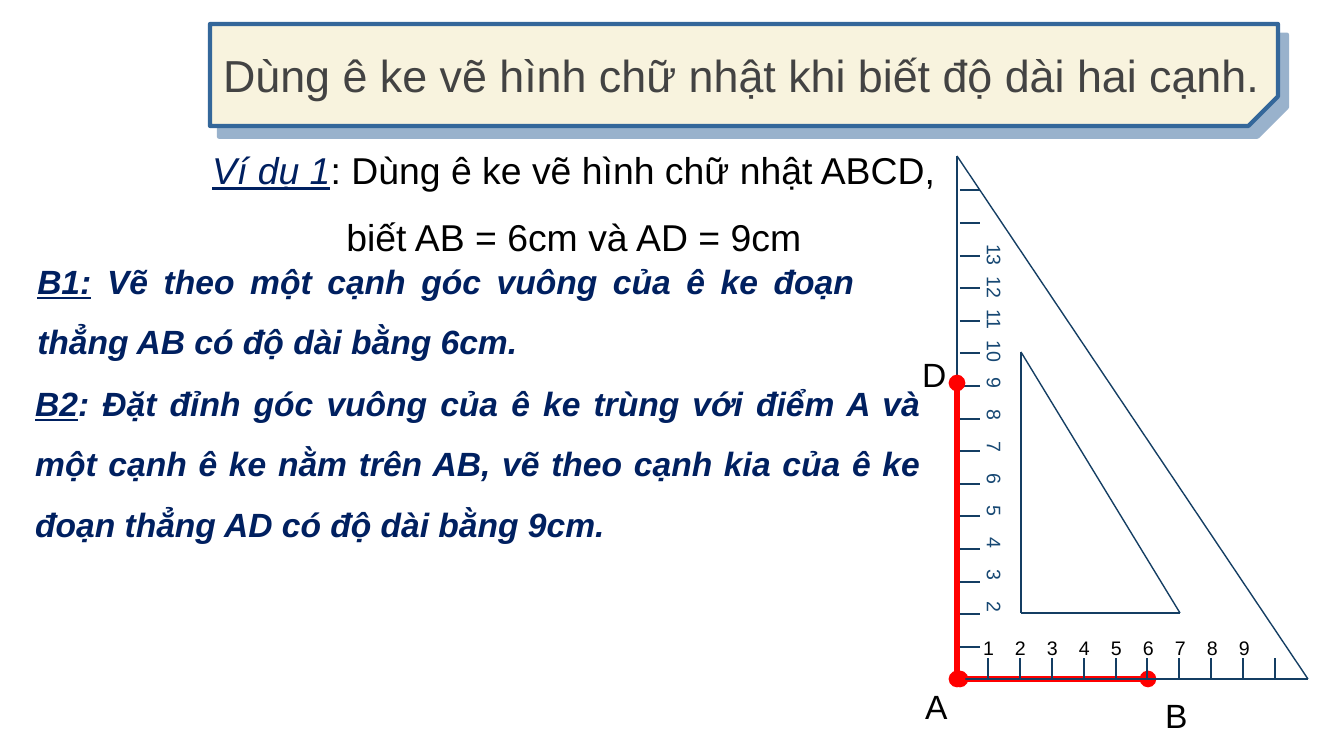
from dataclasses import dataclass
from lxml.etree import SubElement
from pptx import Presentation
from pptx.dml.color import RGBColor
from pptx.enum.shapes import MSO_CONNECTOR, MSO_SHAPE
from pptx.enum.text import MSO_ANCHOR, MSO_AUTO_SIZE, PP_ALIGN
from pptx.oxml.ns import qn
from pptx.util import Emu, Pt


@dataclass
class Theme:
    font: str = "Arial"
    cream: str = "F8F3DE"
    frame: str = "34679A"
    heading: str = "434343"
    navy: str = "002060"
    black: str = "000000"
    red: str = "FF0000"
    ruler: str = "143E63"
    digits: str = "174873"
    title_size: float = 24
    example_size: float = 20
    body_size: float = 18
    digit_size: float = 10.5


T = Theme()
SCALE = 914400 / 134.4


def px(*values):
    return [Emu(int(v * SCALE)) for v in values]


def write(sp, runs, size, **para):
    """Fill a text shape with one paragraph of (text, colour, format) runs."""
    tf = sp.text_frame
    tf.word_wrap = True
    tf.vertical_anchor = MSO_ANCHOR.TOP
    p = tf.paragraphs[0]
    for name, value in para.items():
        setattr(p, name, value)
    for text, color, fmt in runs:
        r = p.add_run()
        r.text = text
        r.font.color.rgb = RGBColor.from_string(color)
        for name, value in {"name": T.font, "size": Pt(size), **fmt}.items():
            setattr(r.font, name, value)
    return p


prs = Presentation()
prs.slide_width, prs.slide_height = px(1344, 756)
s = prs.slides.add_slide(prs.slide_layouts[5])

# Heading plate with one snipped corner and a hard shadow
plate = s.shapes.add_shape(MSO_SHAPE.SNIP_1_RECTANGLE, *px(210, 24, 1068, 102))
plate.adjustments[0] = 0.29
plate.rotation = 180
plate._element.spPr.find(qn("a:xfrm")).set("flipH", "1")
plate.fill.solid()
plate.fill.fore_color.rgb = RGBColor.from_string(T.cream)
plate.line.color.rgb = RGBColor.from_string(T.frame)
plate.line.width = Pt(2.25)
plate.shadow.inherit = False
effects = plate._element.spPr.find(qn("a:effectLst"))
shadow = SubElement(effects, qn("a:outerShdw"), blurRad="0", dist=str(Pt(7.5)),
                    dir=str(50 * 60000), algn="bl", rotWithShape="0")
shade = SubElement(shadow, qn("a:srgbClr"), val=T.frame)
SubElement(shade, qn("a:alpha"), val="50000")

# Title; the plate goes behind it
title = s.shapes.title
title.left, title.top, title.width, title.height = px(210, 24, 1094, 129)
s.shapes._spTree.remove(plate._element)
title._element.addprevious(plate._element)
tf = title.text_frame
tf.auto_size = MSO_AUTO_SIZE.NONE
for side in ("left", "top", "right", "bottom"):
    setattr(tf, f"margin_{side}", px(13)[0])
write(title, [("Dùng ê ke vẽ hình chữ nhật khi biết độ dài hai cạnh.", T.heading, {})],
      T.title_size, alignment=PP_ALIGN.JUSTIFY, line_spacing=1.2)

# Set square: outer triangle, inner triangle, centimetre ticks
CORNER_X, CORNER_Y = 957, 679
outer = [(CORNER_X, 156), (CORNER_X, CORNER_Y), (1308, CORNER_Y)]
inner = [(1021, 352), (1021, 613), (1180, 613)]
edges = [(tri[i - 1], tri[i]) for tri in (outer, inner) for i in range(3)]
for i in range(1, 11):
    x = CORNER_X + 318 * i // 10
    edges.append(((x, CORNER_Y), (x, 658)))
for i in range(1, 16):
    y = CORNER_Y - 326 * i // 10
    edges.append(((960, y), (980, y)))

lines = [((960, CORNER_Y), (1148, CORNER_Y), T.red, 3)]
lines += [(a, b, T.ruler, 0.75) for a, b in edges]
lines.append(((CORNER_X, CORNER_Y), (CORNER_X, 383), T.red, 3))

# Sides AB and AD are red with round ends, below and above the set square
square = None
for a, b, color, width in lines:
    if color == T.ruler and square is None:
        square = s.shapes.add_group_shape()
    shapes = square.shapes if color == T.ruler else s.shapes
    cn = shapes.add_connector(MSO_CONNECTOR.STRAIGHT, *px(*a, *b))
    cn.line.color.rgb = RGBColor.from_string(color)
    cn.line.width = Pt(width)
    if color == T.red:
        ln = cn.line._get_or_add_ln()
        for end in ("a:headEnd", "a:tailEnd"):
            SubElement(ln, qn(end), type="oval")
    SubElement(cn._element.spPr, qn("a:effectLst"))

# Ruler digits, spaced by centred tab stops
scales = [
    ((970, 629, 352, 39), 0, range(1, 10), T.black, 37),
    ((738, 468, 512, 38), 90, range(13, 1, -1), T.digits, 43),
]
for box, angle, numbers, color, first in scales:
    sp = square.shapes.add_textbox(*px(*box))
    sp.rotation = angle
    p = write(sp, [("\t".join(map(str, numbers)), color, {})], T.digit_size)
    tabs = SubElement(p._p.get_or_add_pPr(), qn("a:tabLst"))
    for i in range(len(numbers) - 1):
        SubElement(tabs, qn("a:tab"), pos=str(px(first + 32 * i)[0]), algn="ctr")

# Example, steps and point names
bold = {"bold": True, "italic": True}
justified = {"alignment": PP_ALIGN.JUSTIFY, "line_spacing": 1.5}
texts = [
    ((175, 118, 798, 141), T.example_size,
     [("Ví dụ 1", T.navy, {"italic": True, "underline": True}),
      (": Dùng ê ke vẽ hình chữ nhật ABCD, biết AB = 6cm và AD = 9cm", T.black, {})],
     {"alignment": PP_ALIGN.CENTER, "line_spacing": 1.5}),
    ((24, 234, 844, 128), T.body_size,
     [("B1:", T.navy, {**bold, "underline": True}),
      (" Vẽ theo một cạnh góc vuông của ê ke đoạn thẳng AB có độ dài bằng 6cm.",
       T.navy, bold)],
     justified),
    ((22, 356, 912, 196), T.body_size,
     [("B2", T.navy, {**bold, "underline": True}),
      (": Đặt đỉnh góc vuông của ê ke trùng với điểm A và một cạnh ê ke nằm trên AB, "
       "vẽ theo cạnh kia của ê ke đoạn thẳng AD có độ dài bằng 9cm.", T.navy, bold)],
     {**justified, "space_after": Pt(10)}),
]
for name, x, y, w in [("A", 912, 679, 54), ("B", 1152, 688, 54), ("D", 909, 347, 42)]:
    texts.append(((x, y, w, 54), T.body_size, [(name, T.black, {})], {}))
for box, size, runs, para in texts:
    sp = s.shapes.add_textbox(*px(*box))
    sp.text_frame.auto_size = MSO_AUTO_SIZE.SHAPE_TO_FIT_TEXT
    write(sp, runs, size, **para)

prs.save("out.pptx")
